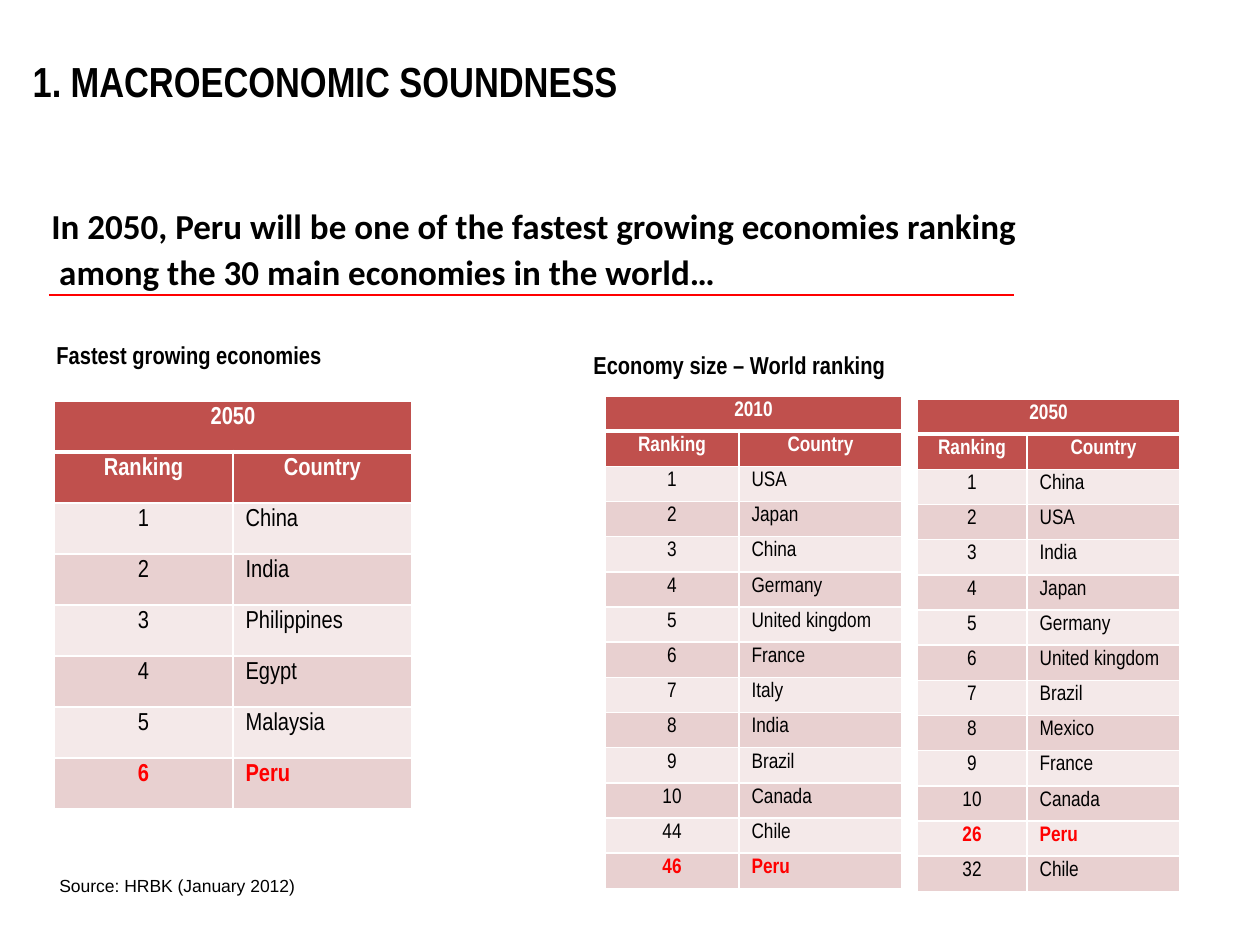
"""Build a slide ranking the fastest growing and the largest economies."""
from lxml import etree
from pptx import Presentation
from pptx.dml.color import RGBColor
from pptx.enum.shapes import MSO_CONNECTOR
from pptx.enum.text import MSO_ANCHOR, MSO_AUTO_SIZE, PP_ALIGN
from pptx.oxml.ns import qn
from pptx.util import Pt

PX = 914400 / 126
LEFT, CENTER = PP_ALIGN.LEFT, PP_ALIGN.CENTER
TOP, MIDDLE = MSO_ANCHOR.TOP, MSO_ANCHOR.MIDDLE
NO_FIT = MSO_AUTO_SIZE.NONE
STRAIGHT = MSO_CONNECTOR.STRAIGHT

BLACK = RGBColor(0x00, 0x00, 0x00)
WHITE = RGBColor(0xFF, 0xFF, 0xFF)
RED = RGBColor(0xFF, 0x00, 0x00)
HEADER = RGBColor(0xC0, 0x50, 0x4D)
BANDS = RGBColor(0xF4, 0xE9, 0xE9), RGBColor(0xE8, 0xD0, 0xD0)

TITLE = "MACROECONOMIC SOUNDNESS"
HEADLINE = ("In 2050, Peru will be one of the fastest growing economies ranking"
            "\v among the 30 main economies in the world…")
SUBHEADS = [
    ("Fastest growing economies", (44, 334, 476, 59)),
    ("Economy size – World ranking", (581, 344, 551, 59)),
]
SOURCE = "Source: HRBK (January 2012)"
COLUMNS = ["Ranking", "Country"]
HIGHLIGHT = "Peru"
TOP_TEN = list(range(1, 11))

TABLES = [
    dict(year="2010", ranks=TOP_TEN + [44, 46],
         countries=["USA", "Japan", "China", "Germany", "United kingdom", "France",
                    "Italy", "India", "Brazil", "Canada", "Chile", "Peru"],
         left=605, top=396, widths=(134, 163), height=491, size=12, inset=5),
    dict(year="2050", ranks=TOP_TEN + [26, 32],
         countries=["China", "USA", "India", "Japan", "Germany", "United kingdom",
                    "Brazil", "Mexico", "France", "Canada", "Peru", "Chile"],
         left=917, top=399, widths=(110, 153), height=491, size=12, inset=5),
    dict(year="2050", ranks=TOP_TEN[:6],
         countries=["China", "India", "Philippines", "Egypt", "Malaysia", "Peru"],
         left=54, top=401, widths=(179, 179), height=408, size=14, inset=6),
]


def px(n):
    return round(n * PX)


def place(shape, left, top, width, height):
    shape.left, shape.top = px(left), px(top)
    shape.width, shape.height = px(width), px(height)


def write(tf, text, size=14, font="Arial Narrow", color=BLACK, bold=True, align=LEFT,
          hanging=0, numbered=False, spacing=None):
    p = tf.paragraphs[0]
    p.text = text
    pPr = p._p.get_or_add_pPr()
    if hanging:
        pPr.set("marL", str(px(hanging)))
        pPr.set("indent", str(-px(hanging)))
    if numbered:
        etree.SubElement(pPr, qn("a:buAutoNum"), type="arabicPeriod")
    p.alignment = align
    if spacing:
        p.line_spacing = spacing
    for r in p.runs:
        r.font.size, r.font.name = Pt(size), font
        r.font.bold, r.font.color.rgb = bold, color


def add_text(s, text, box, anchor=TOP, **fmt):
    shape = s.shapes.add_textbox(0, 0, 0, 0)
    place(shape, *box)
    tf = shape.text_frame
    tf.word_wrap, tf.vertical_anchor = True, anchor
    write(tf, text, **fmt)


def add_borders(cell, **widths):
    tcPr = cell._tc.get_or_add_tcPr()
    for side in "LRTB":
        ln = etree.SubElement(tcPr, qn(f"a:ln{side}"), w=str(Pt(widths.get(side, 1))))
        fill = etree.SubElement(ln, qn("a:solidFill"))
        etree.SubElement(fill, qn("a:srgbClr"), val=str(WHITE))


def add_ranking(s, year, ranks, countries, left, top, widths, height, size, inset):
    rows = [[year, ""], COLUMNS, *zip(ranks, countries)]
    table = s.shapes.add_table(len(rows), len(COLUMNS), px(left), px(top),
                               px(sum(widths)), px(height)).table
    table.first_row = table.horz_banding = False
    for column, width in zip(table.columns, widths):
        column.width = px(width)
    for i, values in enumerate(rows):
        table.rows[i].height = px(height / len(rows))
        is_header = i < 2
        is_peru = HIGHLIGHT in values
        color = WHITE if is_header else RED if is_peru else BLACK
        for j, value in enumerate(values):
            cell = table.cell(i, j)
            cell.margin_top = cell.margin_bottom = px(inset)
            add_borders(cell, **({"B": 3} if i == 0 else {"T": 3} if i == 1 else {}))
            cell.fill.solid()
            cell.fill.fore_color.rgb = HEADER if is_header else BANDS[i % 2]
            write(cell.text_frame, str(value), size=size, color=color,
                  bold=is_header or is_peru,
                  align=CENTER if is_header or j == 0 else LEFT)
    table.cell(0, 0).merge(table.cell(0, 1))


def main():
    prs = Presentation()
    prs.slide_width, prs.slide_height = px(1260), px(945)
    s = prs.slides.add_slide(prs.slide_layouts[5])

    title = s.shapes.title
    place(title, 20, 32, 656, 97)
    tf = title.text_frame
    tf.auto_size, tf.vertical_anchor = NO_FIT, MIDDLE
    write(tf, TITLE, size=24, hanging=38, numbered=True)

    add_text(s, HEADLINE, (39, 193, 994, 106), anchor=MIDDLE,
             size=20, font="Calibri", spacing=1.1)
    rule = s.shapes.add_connector(STRAIGHT, px(49), px(295), px(1014), px(295))
    rule.line.color.rgb, rule.line.width = RED, Pt(1.5)
    etree.SubElement(rule._element.spPr, qn("a:effectLst"))

    for text, box in SUBHEADS:
        add_text(s, text, box, hanging=24)
    for ranking in TABLES:
        add_ranking(s, **ranking)
    add_text(s, SOURCE, (47, 869, 397, 34), size=10, font="Arial", bold=False)

    prs.save("out.pptx")


if __name__ == "__main__":
    main()
